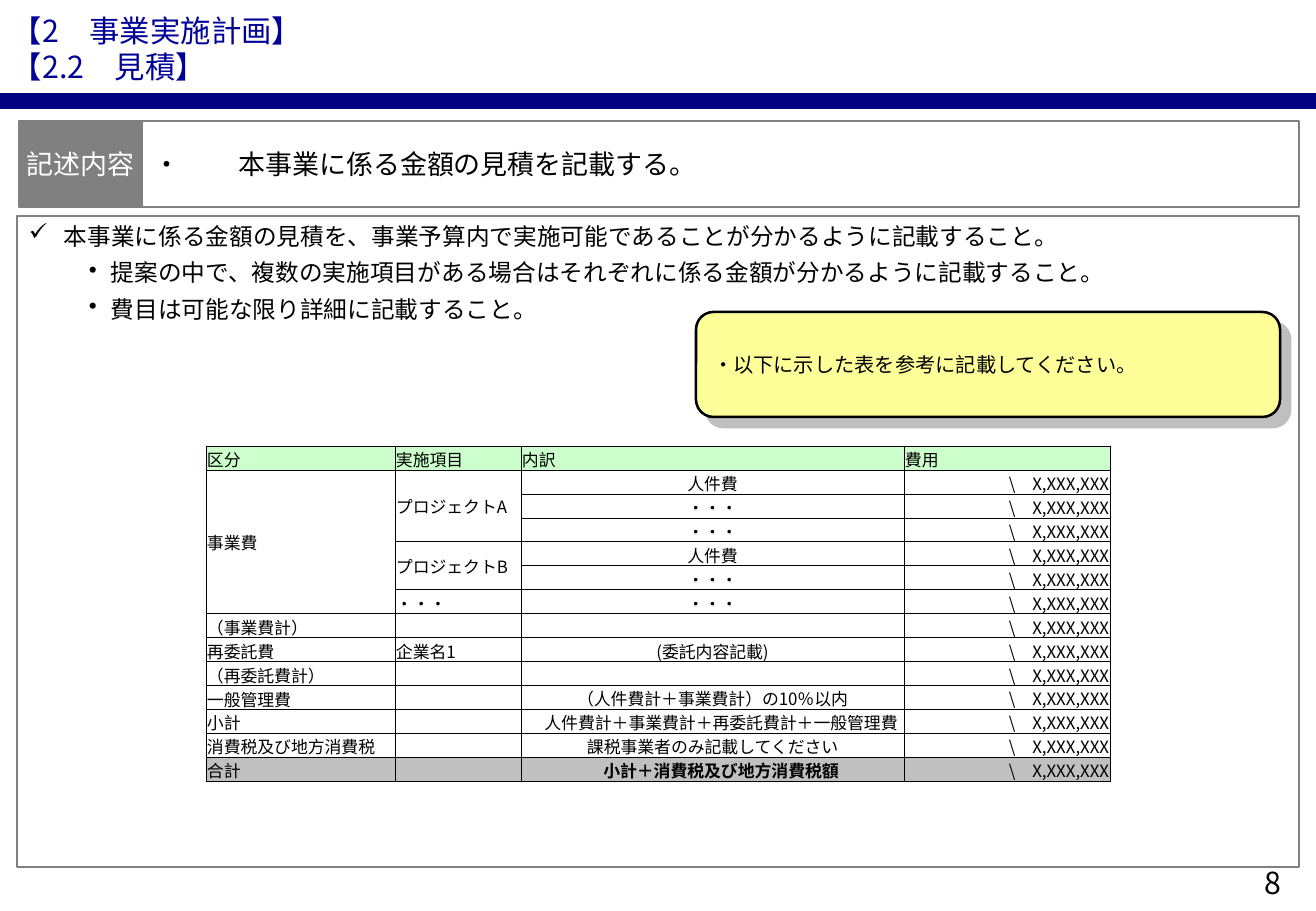
from lxml import etree
from pptx import Presentation
from pptx.dml.color import RGBColor
from pptx.enum.shapes import MSO_CONNECTOR, MSO_SHAPE
from pptx.enum.text import MSO_ANCHOR as ANCHOR, PP_ALIGN as ALIGN
from pptx.oxml.ns import qn
from pptx.util import Pt

FONT = "Noto Sans CJK JP"
COLORS = {
    "navy": "000080", "title": "000099", "gray": "808080", "white": "FFFFFF",
    "black": "000000", "header": "CCFFCC", "total": "C0C0C0", "note": "FFFF99",
}
TITLE = ["【2　事業実施計画】", "【2.2　見積】"]
LABEL = "記述内容"
SUMMARY = "・\t本事業に係る金額の見積を記載する。"
# bullet, level, left indent px, hanging px, text
GUIDANCE = [
    ("✓", 0, 35, 35, "本事業に係る金額の見積を、事業予算内で実施可能であることが分かるように記載すること。"),
    ("•", 1, 82, 22, "提案の中で、複数の実施項目がある場合はそれぞれに係る金額が分かるように記載すること。"),
    ("•", 1, 82, 22, "費目は可能な限り詳細に記載すること。"),
]
NOTE = "・以下に示した表を参考に記載してください。"
PAGE_NUMBER = "8"

HEADINGS = ("区分", "実施項目", "内訳", "費用")
COST = r"\　X,XXX,XXX"
ITEMS = [
    ("事業費", "プロジェクトA", "人件費"),
    ("", "", "・・・"),
    ("", "", "・・・"),
    ("", "プロジェクトB", "人件費"),
    ("", "", "・・・"),
    ("", "・・・", "・・・"),
    ("（事業費計）", "", ""),
    ("再委託費", "企業名1", "(委託内容記載)"),
    ("（再委託費計）", "", ""),
    ("一般管理費", "", "（人件費計＋事業費計）の10％以内"),
    ("小計", "", "　人件費計＋事業費計＋再委託費計＋一般管理費"),
    ("消費税及び地方消費税", "", "課税事業者のみ記載してください"),
    ("合計", "", "　小計＋消費税及び地方消費税額"),
]
MERGES = [((1, 0), (6, 0)), ((1, 1), (3, 1)), ((4, 1), (5, 1))]
COLUMN_WIDTHS = (189, 126, 383, 206)
COLUMN_ALIGNS = (ALIGN.LEFT, ALIGN.LEFT, ALIGN.CENTER, ALIGN.RIGHT)
ROW_HEIGHT = 24
FIRST_BOTTOM_ROW = 7


def px(length):
    return round(length * 914400 / 121.5)


def rgb(name):
    return RGBColor.from_string(COLORS[name])


def add_xml(parent, tag, **attributes):
    return etree.SubElement(parent, qn(tag), attributes)


def style(paragraph, size, color="black", align=ALIGN.LEFT, bold=False):
    paragraph.alignment = align
    font = paragraph.font
    font.size, font.name, font.bold = Pt(size), FONT, bold
    font.color.rgb = rgb(color)
    defaults = paragraph._p.pPr.find(qn("a:defRPr"))
    add_xml(defaults, "a:ea", typeface=FONT)


def write(frame, lines, size, color="black", align=ALIGN.LEFT, anchor=ANCHOR.TOP, wrap=True):
    frame.word_wrap = wrap
    frame.vertical_anchor = anchor
    for index, line in enumerate(lines):
        paragraph = frame.paragraphs[0] if index == 0 else frame.add_paragraph()
        paragraph.text = line
        style(paragraph, size, color, align)
    return frame.paragraphs


def add_box(kind, bounds, fill, line, line_width):
    shape = slide.shapes.add_shape(kind, *map(px, bounds))
    shape.shadow.inherit = False
    shape.fill.solid()
    shape.fill.fore_color.rgb = rgb(fill)
    shape.line.color.rgb = rgb(line)
    shape.line.width = Pt(line_width)
    return shape


def indent(paragraph, left, hanging):
    properties = paragraph._p.get_or_add_pPr()
    properties.set("marL", str(px(left)))
    properties.set("indent", str(-px(hanging)))


def set_bullet(paragraph, character):
    bullet = etree.Element(qn("a:buChar"), char=character)
    paragraph._p.pPr.find(qn("a:defRPr")).addprevious(bullet)


def set_borders(cell):
    properties = cell._tc.get_or_add_tcPr()
    for position, side in enumerate(("a:lnL", "a:lnR", "a:lnT", "a:lnB")):
        border = etree.Element(qn(side), w=str(Pt(0.5)))
        add_xml(add_xml(border, "a:solidFill"), "a:srgbClr", val=COLORS["black"])
        properties.insert(position, border)


def fill_cell(cell, text, row, column):
    is_header, is_total = row == 0, row == len(ITEMS)
    cell.margin_left = cell.margin_right = cell.margin_top = px(1)
    cell.margin_bottom = 0
    at_bottom = row >= FIRST_BOTTOM_ROW and column >= 2
    cell.vertical_anchor = ANCHOR.BOTTOM if at_bottom else ANCHOR.MIDDLE
    paragraph = cell.text_frame.paragraphs[0]
    paragraph.text = text
    style(paragraph, 10, align=ALIGN.LEFT if is_header else COLUMN_ALIGNS[column],
          bold=is_total and column == 2)
    if not text:
        add_xml(paragraph._p, "a:endParaRPr", sz="1000")
    if is_header or is_total:
        cell.fill.solid()
        cell.fill.fore_color.rgb = rgb("header" if is_header else "total")
    else:
        cell.fill.background()
    set_borders(cell)


def add_estimate_table(left, top):
    rows = [HEADINGS] + [item + (COST,) for item in ITEMS]
    table = slide.shapes.add_table(
        len(rows), len(HEADINGS), px(left), px(top),
        px(sum(COLUMN_WIDTHS)), px(ROW_HEIGHT * len(rows))).table
    for column, width in zip(table.columns, COLUMN_WIDTHS):
        column.width = px(width)
    for row_index, texts in enumerate(rows):
        table.rows[row_index].height = px(ROW_HEIGHT)
        for column_index, text in enumerate(texts):
            fill_cell(table.cell(row_index, column_index), text, row_index, column_index)
    for first, last in MERGES:
        table.cell(*first).merge(table.cell(*last))


presentation = Presentation()
presentation.slide_width, presentation.slide_height = px(1316), px(911)
slide = presentation.slides.add_slide(presentation.slide_layouts[6])

rule = slide.shapes.add_connector(MSO_CONNECTOR.STRAIGHT, 0, px(101), px(1316), px(101))
rule.line.color.rgb = rgb("navy")
rule.line.width = Pt(10)
add_xml(rule._element.spPr, "a:effectLst")

number = slide.shapes.add_textbox(*map(px, (1232, 858, 81, 49)))
write(number.text_frame, [PAGE_NUMBER], 18, align=ALIGN.CENTER)

title = slide.shapes.add_textbox(*map(px, (0, 6, 1316, 86)))
write(title.text_frame, TITLE, 18, "title")

label = add_box(MSO_SHAPE.RECTANGLE, (19, 121, 123, 86), "gray", "gray", 0.75)
write(label.text_frame, [LABEL], 16, "white", ALIGN.CENTER, ANCHOR.MIDDLE, wrap=False)

summary = add_box(MSO_SHAPE.RECTANGLE, (142, 121, 1157, 86), "white", "gray", 0.75)
summary_line, = write(summary.text_frame, [SUMMARY], 16, anchor=ANCHOR.MIDDLE, wrap=False)
indent(summary_line, 24, 24)

body = add_box(MSO_SHAPE.RECTANGLE, (17, 216, 1282, 651), "white", "gray", 0.75)
guidance_lines = write(body.text_frame, [entry[-1] for entry in GUIDANCE], 14)
for paragraph, (bullet, level, left, hanging, _) in zip(guidance_lines, GUIDANCE):
    paragraph.level = level
    paragraph.space_before = Pt(4.7)
    indent(paragraph, left, hanging)
    set_bullet(paragraph, bullet)

add_estimate_table(206, 446)

note = add_box(MSO_SHAPE.ROUNDED_RECTANGLE, (696, 312, 584, 105), "note", "black", 1.5)
write(note.text_frame, [NOTE], 12, anchor=ANCHOR.MIDDLE)
shadow = add_xml(note._element.spPr.find(qn("a:effectLst")), "a:outerShdw",
                 dist=str(Pt(8.5)), dir="2700000", algn="ctr", rotWithShape="0")
add_xml(add_xml(shadow, "a:srgbClr", val=COLORS["gray"]), "a:alpha", val="50000")

presentation.save("out.pptx")
